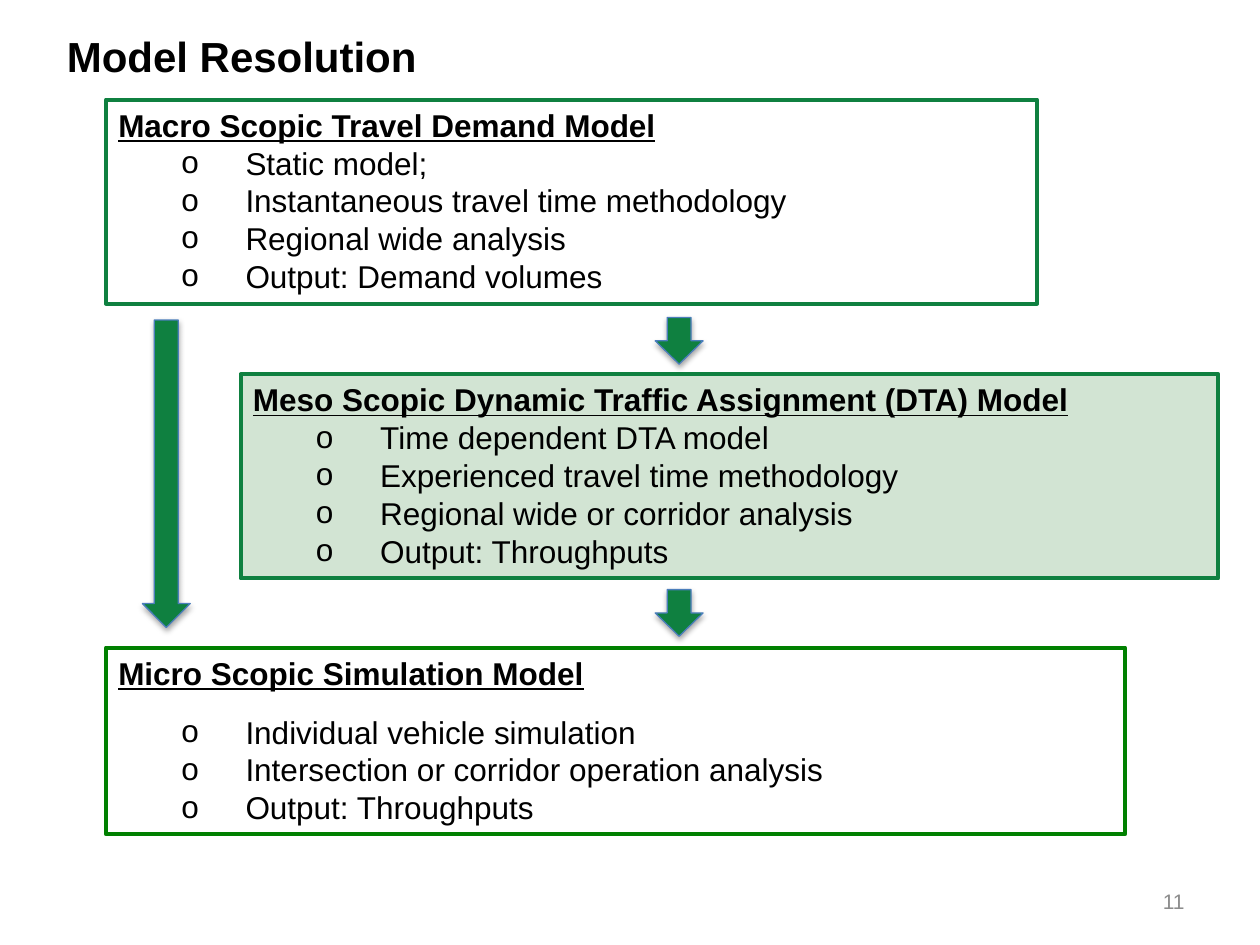
from lxml import etree
from pptx import Presentation
from pptx.dml.color import RGBColor
from pptx.enum.shapes import MSO_SHAPE
from pptx.enum.text import MSO_ANCHOR, MSO_AUTO_SIZE, PP_ALIGN
from pptx.oxml.ns import qn
from pptx.util import Inches, Pt

RECTANGLE, DOWN_ARROW = MSO_SHAPE.RECTANGLE, MSO_SHAPE.DOWN_ARROW
TOP, MIDDLE = MSO_ANCHOR.TOP, MSO_ANCHOR.MIDDLE
LEFT, RIGHT = PP_ALIGN.LEFT, PP_ALIGN.RIGHT
NO_AUTOFIT = MSO_AUTO_SIZE.NONE
COLORS = {
    "text": "000000",
    "green": "0F8040",
    "bright green": "008000",
    "pale green": "D2E4D3",
    "arrow edge": "4B7EBC",
    "page number": "8C8C8C",
}


def color(name):
    return RGBColor.from_string(COLORS[name])


def style(para, size, color_name, bold=False, underline=False, align=LEFT):
    para.alignment = align
    font = para.font
    font.name, font.size = "Arial", Pt(size)
    font.bold, font.underline = bold, underline
    font.color.rgb = color(color_name)


deck = Presentation()
deck.slide_width, deck.slide_height = Inches(10), Inches(7.5)
page = deck.slides.add_slide(deck.slide_layouts[5])

title = page.shapes.title
title.left, title.top = Inches(0.43), Inches(0.19)
title.width, title.height = Inches(3), Inches(0.5)
title.text_frame.text = "Model Resolution"
title.text_frame.word_wrap = False
title.text_frame.auto_size = NO_AUTOFIT
title.text_frame.vertical_anchor = TOP
style(title.text_frame.paragraphs[0], 24, "text", bold=True)

models = [
    ("Macro Scopic Travel Demand Model", (0.84, 0.79, 7.39, 1.62), None, "green", 0,
     ["Static model;", "Instantaneous travel time methodology",
      "Regional wide analysis", "Output: Demand volumes"]),
    ("Meso Scopic Dynamic Traffic Assignment (DTA) Model", (1.91, 2.97, 7.76, 1.62),
     "pale green", "green", 0,
     ["Time dependent DTA model", "Experienced travel time methodology",
      "Regional wide or corridor analysis", "Output: Throughputs"]),
    ("Micro Scopic Simulation Model", (0.84, 5.14, 8.09, 1.48), None, "bright green", 12,
     ["Individual vehicle simulation", "Intersection or corridor operation analysis",
      "Output: Throughputs"]),
]
for heading, place, fill, edge, gap, points in models:
    box = page.shapes.add_shape(RECTANGLE, *map(Inches, place))
    box.shadow.inherit = False
    if fill:
        box.fill.solid()
        box.fill.fore_color.rgb = color(fill)
    else:
        box.fill.background()
    box.line.color.rgb = color(edge)
    box.line.width = Pt(2.25)
    frame = box.text_frame
    frame.word_wrap = True
    frame.vertical_anchor = TOP
    para = frame.paragraphs[0]
    para.text = heading
    para.space_after = Pt(gap)
    style(para, 18, "text", bold=True, underline=True)
    for point in points:
        para = frame.add_paragraph()
        para.text = point
        para.level = 1
        properties = para._p.get_or_add_pPr()
        properties.set("marL", str(Inches(1.01)))
        properties.set("indent", str(Inches(-0.51)))
        etree.SubElement(properties, qn("a:buFont"), typeface="Arial")
        etree.SubElement(properties, qn("a:buChar"), char="o")
        style(para, 18, "text")

for left, top, height in [(1.13, 2.54, 2.44), (5.2, 2.52, 0.37), (5.2, 4.68, 0.37)]:
    arrow = page.shapes.add_shape(
        DOWN_ARROW, Inches(left), Inches(top), Inches(0.38), Inches(height))
    arrow.fill.solid()
    arrow.fill.fore_color.rgb = color("green")
    arrow.line.color.rgb = color("arrow edge")
    arrow.line.width = Pt(0.75)

number = page.shapes.add_textbox(Inches(7.17), Inches(6.95), Inches(2.33), Inches(0.4))
number.text_frame.word_wrap = True
number.text_frame.vertical_anchor = MIDDLE
number.text_frame.text = "11"
style(number.text_frame.paragraphs[0], 12, "page number", align=RIGHT)

deck.save("out.pptx")
